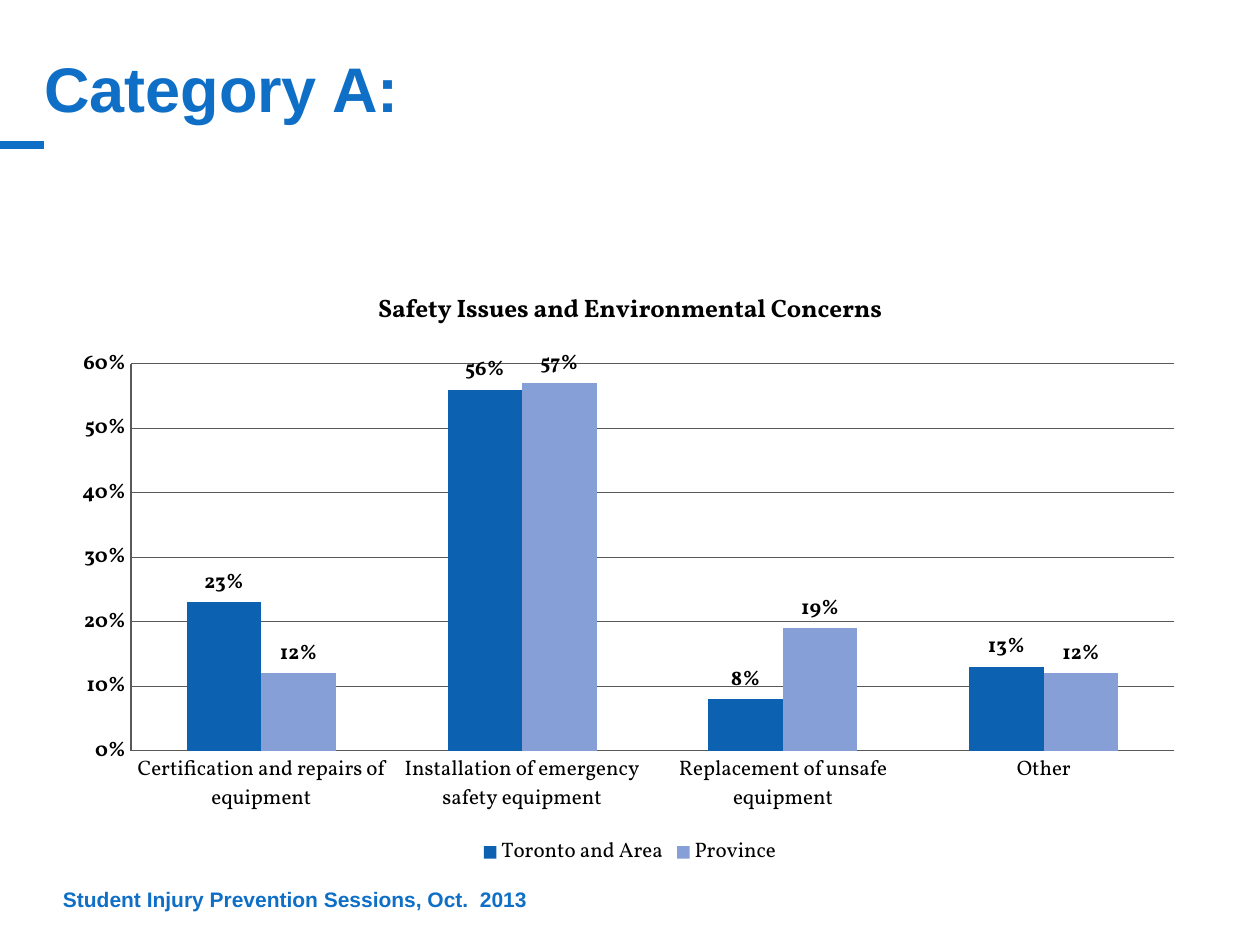
from lxml import etree
from pptx import Presentation
from pptx.chart.data import CategoryChartData
from pptx.dml.color import RGBColor
from pptx.enum.chart import (XL_CHART_TYPE, XL_LABEL_POSITION,
                             XL_LEGEND_POSITION, XL_TICK_MARK)
from pptx.enum.shapes import MSO_CONNECTOR
from pptx.enum.text import MSO_ANCHOR, PP_ALIGN
from pptx.oxml import parse_xml
from pptx.oxml.ns import nsdecls, qn
from pptx.util import Inches, Pt

CLUSTERED = XL_CHART_TYPE.COLUMN_CLUSTERED
OUTSIDE_END = XL_LABEL_POSITION.OUTSIDE_END
LEGEND_BOTTOM = XL_LEGEND_POSITION.BOTTOM
NO_TICK = XL_TICK_MARK.NONE
STRAIGHT = MSO_CONNECTOR.STRAIGHT
BOTTOM = MSO_ANCHOR.BOTTOM
LEFT = PP_ALIGN.LEFT

BLUE = RGBColor(0x0F, 0x6F, 0xC6)
TORONTO_BLUE = RGBColor(0x0C, 0x62, 0xB0)
PROVINCE_BLUE = RGBColor(0x87, 0x9F, 0xD7)
BLACK = RGBColor(0, 0, 0)
AXIS_GRAY = RGBColor(0x59, 0x59, 0x59)
HEADING_FONT = "Arial"
CHART_FONT = "Vollkorn"

CATEGORIES = [
    "Certification and repairs of equipment",
    "Installation of emergency safety equipment",
    "Replacement of unsafe equipment",
    "Other",
]
SERIES = [
    ("Toronto and Area", (0.23, 0.56, 0.08, 0.13), TORONTO_BLUE),
    ("Province", (0.12, 0.57, 0.19, 0.12), PROVINCE_BLUE),
]
# Plot area as fractions of the chart box
PLOT_AREA = {"x": 0.06, "y": 0.16, "w": 0.92, "h": 0.64}


def style_font(font, name, size, color, bold):
    font.name = name
    font.size = Pt(size)
    font.color.rgb = color
    font.bold = bold


def write_heading(frame, text, size, top_inset=0):
    """Bottom-anchored bold blue text in one run."""
    frame.word_wrap = True
    frame.vertical_anchor = BOTTOM
    frame.margin_left = frame.margin_right = frame.margin_bottom = 0
    frame.margin_top = Inches(top_inset)
    paragraph = frame.paragraphs[0]
    paragraph.alignment = LEFT
    run = paragraph.add_run()
    run.text = text
    style_font(run.font, HEADING_FONT, size, BLUE, True)


def add_heading(slide, left, top, width, height):
    # Title
    title = slide.shapes.title
    title.left, title.top = Inches(left), Inches(top)
    title.width, title.height = Inches(width), Inches(height)
    write_heading(title.text_frame, "Category A:", 36, 0.05)

    # Accent rule from the slide edge to the title's left side
    rule_y = Inches(top + height + 0.16)
    rule = slide.shapes.add_connector(STRAIGHT, 0, rule_y, Inches(left), rule_y)
    rule.line.color.rgb = BLUE
    rule.line.width = Pt(4.75)
    etree.SubElement(rule._element.spPr, qn("a:effectLst"))


def add_footer(slide, left, top, width, height):
    footer = slide.shapes.add_textbox(
        Inches(left), Inches(top), Inches(width), Inches(height))
    write_heading(footer.text_frame,
                  "Student Injury Prevention Sessions, Oct.  2013", 12)


def fix_plot_area(chart):
    """Place the inner plot area at fixed fractions of the chart box."""
    plot_area = chart.element.find(qn("c:chart")).find(qn("c:plotArea"))
    for old_layout in plot_area.findall(qn("c:layout")):
        plot_area.remove(old_layout)
    fractions = "".join(f'<c:{k} val="{v}"/>' for k, v in PLOT_AREA.items())
    plot_area.insert(0, parse_xml(
        f'<c:layout {nsdecls("c")}><c:manualLayout>'
        '<c:layoutTarget val="inner"/><c:xMode val="edge"/><c:yMode val="edge"/>'
        f'{fractions}</c:manualLayout></c:layout>'))


def add_concerns_chart(slide, left, top, width, height):
    data = CategoryChartData(number_format="0%")
    data.categories = CATEGORIES
    for name, values, _ in SERIES:
        data.add_series(name, values)
    chart = slide.shapes.add_chart(
        CLUSTERED, Inches(left), Inches(top), Inches(width), Inches(height),
        data).chart
    style_font(chart.font, CHART_FONT, 12, BLACK, False)
    fix_plot_area(chart)

    # Chart title
    chart.has_title = True
    title_run = chart.chart_title.text_frame.paragraphs[0].add_run()
    title_run.text = "Safety Issues and Environmental Concerns"
    style_font(title_run.font, CHART_FONT, 14.4, BLACK, True)
    chart.chart_title.include_in_layout = False

    # Legend
    chart.has_legend = True
    chart.legend.position = LEGEND_BOTTOM
    chart.legend.include_in_layout = False
    style_font(chart.legend.font, CHART_FONT, 12, BLACK, False)

    # Axes
    value_axis = chart.value_axis
    value_axis.minimum_scale = 0
    value_axis.maximum_scale = 0.6
    value_axis.major_unit = 0.1
    value_axis.tick_labels.number_format = "0%"
    value_axis.tick_labels.number_format_is_linked = False
    value_axis.has_major_gridlines = True
    grid_line = value_axis.major_gridlines.format.line
    for axis, bold in ((chart.category_axis, False), (value_axis, True)):
        axis.major_tick_mark = axis.minor_tick_mark = NO_TICK
        style_font(axis.tick_labels.font, CHART_FONT, 12, BLACK, bold)
    for line in (chart.category_axis.format.line, value_axis.format.line, grid_line):
        line.color.rgb = AXIS_GRAY
        line.width = Pt(0.75)

    # Columns and their value labels
    plot = chart.plots[0]
    plot.gap_width = 150
    plot.overlap = 0
    plot.vary_by_categories = False
    for series, (_, _, color) in zip(plot.series, SERIES):
        series.format.fill.solid()
        series.format.fill.fore_color.rgb = color
        labels = series.data_labels
        labels.show_value = True
        labels.number_format = "0%"
        labels.number_format_is_linked = False
        labels.position = OUTSIDE_END
        style_font(labels.font, CHART_FONT, 12, BLACK, True)


def main():
    deck = Presentation()
    deck.slide_width, deck.slide_height = Inches(10), Inches(7.5)
    slide = deck.slides.add_slide(deck.slide_layouts.get_by_name("Title Only"))
    add_heading(slide, 0.35, 0.36, 9, 0.63)
    add_footer(slide, 0.5, 6.98, 4.1, 0.26)
    add_concerns_chart(slide, 0.5, 2.12, 9, 4.8)
    deck.save("out.pptx")


if __name__ == "__main__":
    main()
